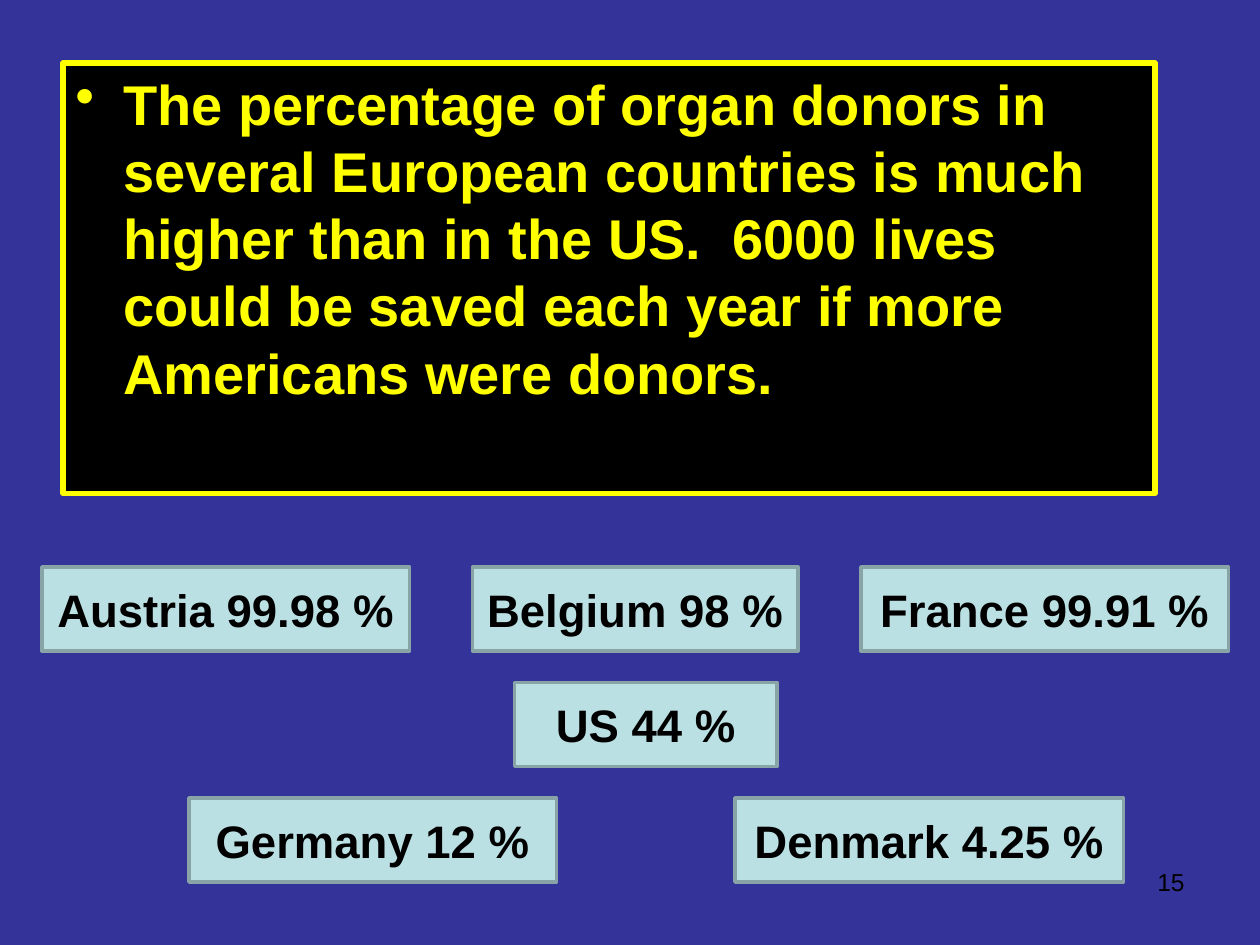
from pptx import Presentation
from pptx.dml.color import RGBColor
from pptx.enum.shapes import MSO_SHAPE
from pptx.enum.text import MSO_ANCHOR, PP_ALIGN
from pptx.oxml import parse_xml
from pptx.oxml.ns import nsdecls
from pptx.util import Inches, Pt

HUE = {"back": "333399", "panel": "000000", "bright": "FFFF00",
       "tile": "BBE0E3", "edge": "89A4A7", "ink": "000000"}
UNIT = Inches(1) // 12

deck = Presentation()
deck.slide_width, deck.slide_height = 120 * UNIT, 90 * UNIT
slide = deck.slides.add_slide(deck.slide_layouts[6])
slide.background.fill.solid()
slide.background.fill.fore_color.rgb = RGBColor.from_string(HUE["back"])


def write(shape, text, size, hue, bold, align, anchor):
    frame = shape.text_frame
    frame.word_wrap = True
    frame.vertical_anchor = anchor
    para = frame.paragraphs[0]
    para.text = text
    para.alignment = align
    para.font.name = "Arial"
    para.font.size = Pt(size)
    para.font.bold = bold
    para.font.color.rgb = RGBColor.from_string(HUE[hue])
    return para


def add_box(col, row, wide, high, fill, edge, weight):
    box = slide.shapes.add_shape(MSO_SHAPE.RECTANGLE, col * UNIT, row * UNIT,
                                 wide * UNIT, high * UNIT)
    box.shadow.inherit = False
    box.fill.solid()
    box.fill.fore_color.rgb = RGBColor.from_string(HUE[fill])
    box.line.color.rgb = RGBColor.from_string(HUE[edge])
    box.line.width = Pt(weight)
    return box


panel = add_box(6, 6, 104, 41, "panel", "bright", 3)
claim = write(panel, "The percentage of organ donors in several European countries "
              "is much higher than in the US.  6000 lives could be saved each year "
              "if more Americans were donors.",
              32, "bright", True, PP_ALIGN.LEFT, MSO_ANCHOR.TOP)
props = claim._p.get_or_add_pPr()
props.set("marL", str(Inches(0.38)))
props.set("indent", str(-Inches(0.38)))
bullet = parse_xml(f'<a:buChar {nsdecls("a")} char="•"/>')
props.insert_element_before(bullet, "a:tabLst", "a:defRPr", "a:extLst")

page = slide.shapes.add_textbox(86 * UNIT, 82 * UNIT, 28 * UNIT, Inches(0.52))
write(page, "15", 14, "ink", False, PP_ALIGN.RIGHT, MSO_ANCHOR.TOP)

rows = [
    [("Austria 99.98 %", 4, 35), ("Belgium 98 %", 45, 31), ("France 99.91 %", 82, 35)],
    [("US 44 %", 49, 25)],
    [("Germany 12 %", 18, 35), ("Denmark 4.25 %", 70, 37)],
]
for step, tiles in enumerate(rows):
    for label, col, wide in tiles:
        tile = add_box(col, 54 + 11 * step, wide, 8, "tile", "edge", 2)
        write(tile, label, 26, "ink", True, PP_ALIGN.CENTER, MSO_ANCHOR.MIDDLE)

deck.save("out.pptx")
